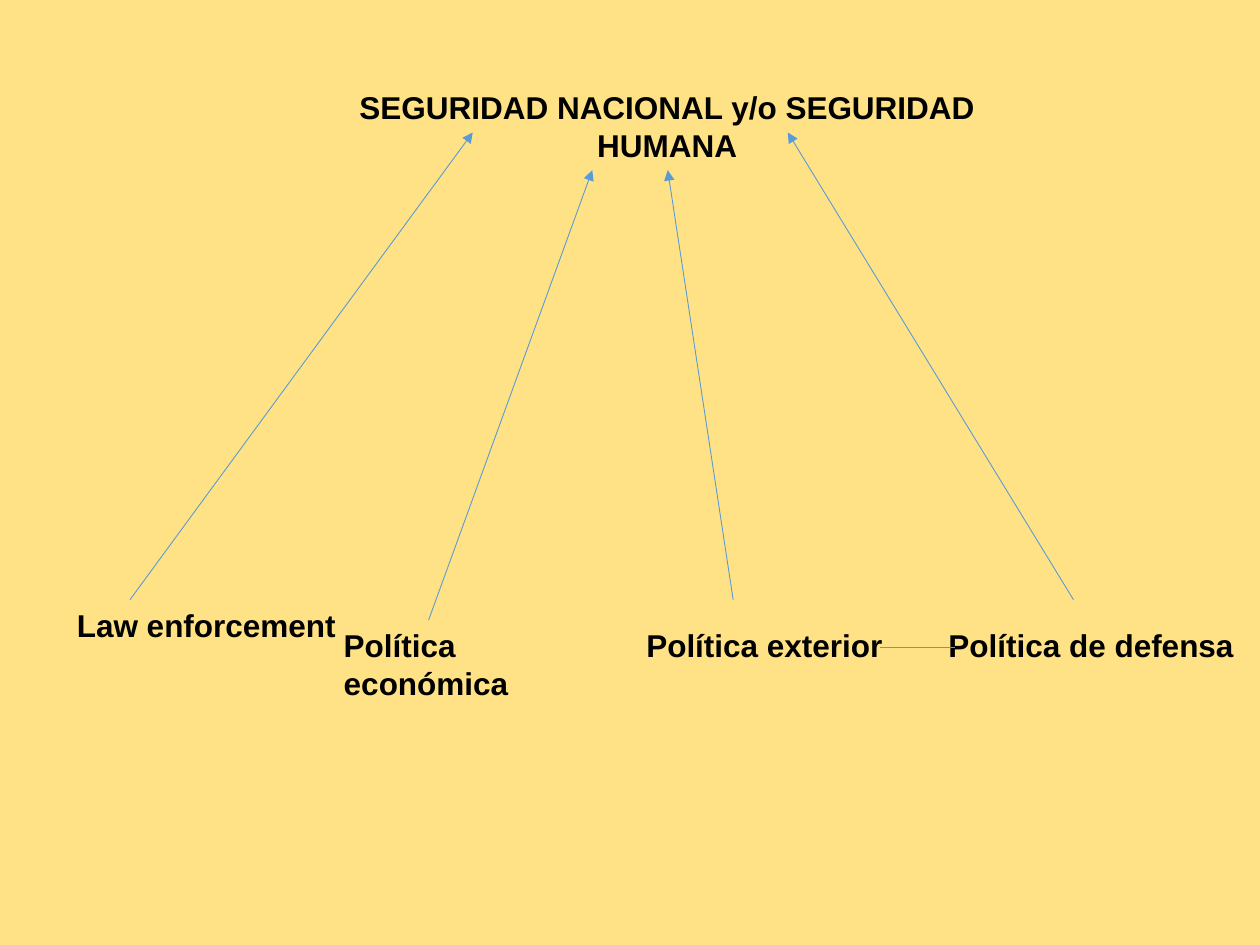
from lxml.etree import SubElement
from pptx import Presentation
from pptx.dml.color import RGBColor
from pptx.enum.shapes import MSO_CONNECTOR
from pptx.enum.text import MSO_AUTO_SIZE, PP_ALIGN as Align
from pptx.oxml.ns import qn
from pptx.util import Cm, Pt

BACKGROUND = RGBColor(0xFF, 0xE2, 0x85)
INK = RGBColor(0x00, 0x00, 0x00)
BLUE = RGBColor(0x5B, 0x9B, 0xD5)

TITLE = "SEGURIDAD NACIONAL y/o SEGURIDAD HUMANA"

# Label, its box (left, top, width, height), arrow start and arrow tip, in cm
POLICIES = [
    ("Law enforcement", (1.3, 12.09, 6.05, 1.02), (2.62, 12.09), (9.53, 2.67)),
    ("Política económica", (6.68, 12.5, 5.44, 1.8), (8.64, 12.5), (11.94, 3.43)),
    ("Política exterior", (12.78, 12.5, 5.44, 1.02), (14.78, 12.09), (13.46, 3.43)),
    ("Política de defensa", (18.87, 12.5, 6.53, 1.02), (21.64, 12.09), (15.88, 2.67)),
]


def write_text(frame, text, font="Arial", size=18, bold=True, color=INK, align=Align.LEFT):
    paragraph = frame.paragraphs[0]
    paragraph.alignment = align
    run = paragraph.add_run()
    run.text = text
    run.font.name = font
    run.font.size = Pt(size)
    run.font.bold = bold
    run.font.color.rgb = color


class Diagram:
    line_color = BLUE
    line_width = Pt(0.5)

    def __init__(self, slide):
        self.slide = slide
        fill = slide.background.fill
        fill.solid()
        fill.fore_color.rgb = BACKGROUND

    def label(self, text, box, **style):
        shape = self.slide.shapes.add_textbox(*map(Cm, box))
        frame = shape.text_frame
        frame.word_wrap = True
        frame.auto_size = MSO_AUTO_SIZE.SHAPE_TO_FIT_TEXT
        write_text(frame, text, **style)

    def line(self, start, end, arrow=False):
        connector = self.slide.shapes.add_connector(
            MSO_CONNECTOR.STRAIGHT, *map(Cm, start + end))
        connector.line.color.rgb = self.line_color
        connector.line.width = self.line_width
        if arrow:
            SubElement(connector.line._get_or_add_ln(), qn("a:tailEnd"), type="triangle")
        SubElement(connector._element.spPr, qn("a:effectLst"))


def main():
    presentation = Presentation()
    presentation.slide_width = Cm(25.4)
    presentation.slide_height = Cm(19.05)
    diagram = Diagram(presentation.slides.add_slide(presentation.slide_layouts[6]))

    diagram.label(TITLE, (6.05, 1.65, 14.8, 1.8), align=Align.CENTER)
    for text, box, start, tip in POLICIES:
        diagram.line(start, tip, arrow=True)
        diagram.label(text, box)
    diagram.line((17.73, 13.06), (19.25, 13.06))

    presentation.save("out.pptx")


if __name__ == "__main__":
    main()
